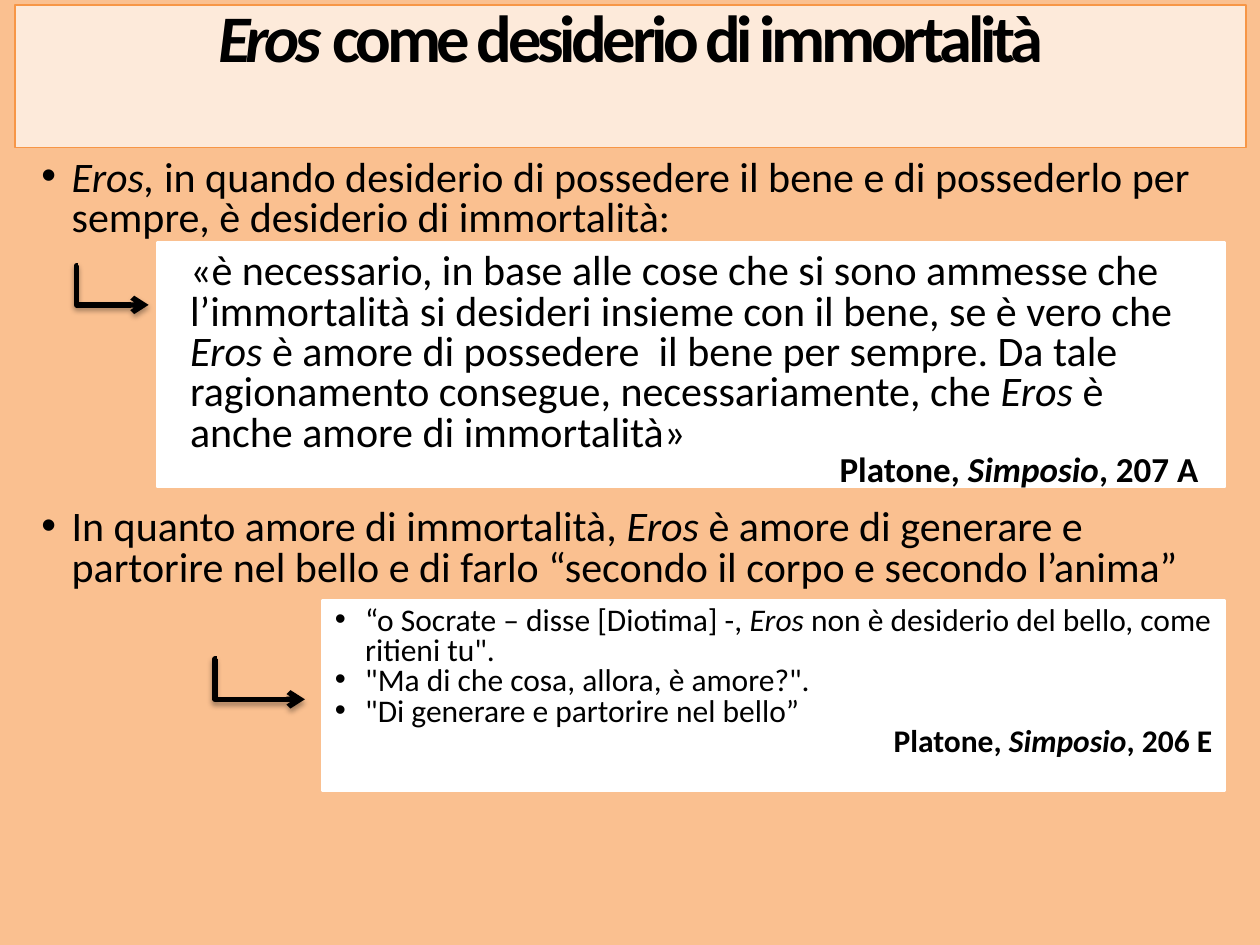
from lxml import etree
from pptx import Presentation
from pptx.dml.color import RGBColor
from pptx.enum.shapes import MSO_CONNECTOR, MSO_SHAPE
from pptx.enum.text import MSO_ANCHOR, MSO_AUTO_SIZE, PP_ALIGN
from pptx.oxml import parse_xml
from pptx.oxml.ns import nsdecls, qn
from pptx.util import Inches, Pt

ELBOW, RECTANGLE = MSO_CONNECTOR.ELBOW, MSO_SHAPE.RECTANGLE
LEFT, RIGHT, CENTER = PP_ALIGN.LEFT, PP_ALIGN.RIGHT, PP_ALIGN.CENTER
TOP, NO_FIT = MSO_ANCHOR.TOP, MSO_AUTO_SIZE.NONE
BLACK, WHITE, PEACH, CREAM, ORANGE = "000000", "FFFFFF", "FAC090", "FDEADA", "F79646"
HANG = 0.24


def paint(target, color):
    if hasattr(target, "solid"):
        target.solid()
        target.fore_color.rgb = RGBColor.from_string(color)
    else:
        target.rgb = RGBColor.from_string(color)


def write(shape, paragraphs):
    frame = shape.text_frame
    for name, value in {"word_wrap": True, "auto_size": NO_FIT, "vertical_anchor": TOP}.items():
        setattr(frame, name, value)
    for i, (runs, size, bold, align, margin, bullet, before) in enumerate(paragraphs):
        paragraph = frame.add_paragraph() if i else frame.paragraphs[0]
        spacing = {"alignment": align, "line_spacing": 0.8, "space_before": Pt(before)}
        for name, value in spacing.items():
            setattr(paragraph, name, value)
        properties = paragraph._p.get_or_add_pPr()
        properties.set("marL", str(Inches(margin)))
        properties.set("indent", str(Inches(-HANG if bullet else 0)))
        if bullet:
            etree.SubElement(properties, qn("a:buFont")).set("typeface", "Arial")
            etree.SubElement(properties, qn("a:buChar")).set("char", "•")
        for text in runs:
            run = paragraph.add_run()
            run.text = text
            style = {"name": "Calibri", "size": Pt(size), "bold": bold,
                     "italic": text in ("Eros", "Eros,", "Simposio")}
            for name, value in style.items():
                setattr(run.font, name, value)
            paint(run.font.color, BLACK)


prs = Presentation()
prs.slide_width, prs.slide_height = Inches(10), Inches(7.5)
slide = prs.slides.add_slide(prs.slide_layouts[5])
paint(slide.background.fill, PEACH)

title = slide.shapes.title
place = {"left": 0.12, "top": 0.04, "width": 9.77, "height": 1.13}
for name, value in place.items():
    setattr(title, name, Inches(value))
paint(title.fill, CREAM)
paint(title.line.fill, ORANGE)
title.line.width = Pt(0.75)
write(title, [(["Eros", " come desiderio di immortalità"], 38, True, CENTER, 0, False, 0)])
for run in title.text_frame.paragraphs[0].runs:
    run.font._element.set("spc", "-250")

panels = []
for left, top, width, height in [(1.25, 1.93, 8.47, 1.93), (2.56, 4.77, 7.16, 1.5)]:
    panel = slide.shapes.add_shape(
        RECTANGLE, Inches(left), Inches(top), Inches(width), Inches(height))
    panel.shadow.inherit = False
    paint(panel.fill, WHITE)
    paint(panel.line.fill, WHITE)
    panel.line.width = Pt(2)
    panels.append(panel)

argument = slide.shapes.add_textbox(Inches(0.23), Inches(1.22), Inches(9.38), Inches(6.26))
write(argument, [
    (["Eros,", " in quando desiderio di possedere il bene e di possederlo per sempre, "
      "è desiderio di immortalità:"], 24, False, LEFT, HANG, True, 0),
    (["«è necessario, in base alle cose che si sono ammesse che l’immortalità si desideri "
      "insieme con il bene, se è vero che ", "Eros",
      " è amore di possedere  il bene per sempre. Da tale ragionamento consegue, "
      "necessariamente, che ", "Eros", " è anche amore di immortalità»"],
     24, False, LEFT, 1.18, False, 7.5),
    (["Platone, ", "Simposio", ", 207 A"], 20, True, RIGHT, HANG, False, 0.2),
    (["In quanto amore di immortalità, ", "Eros", " è amore di generare e partorire nel bello "
      "e di farlo “secondo il corpo e secondo l’anima”"], 24, False, LEFT, HANG, True, 11.5),
])

write(panels[1], [
    (["“o Socrate – disse [Diotima] -, ", "Eros",
      " non è desiderio del bello, come ritieni tu\"."], 18, False, LEFT, HANG, True, 0),
    (["\"Ma di che cosa, allora, è amore?\"."], 18, False, LEFT, HANG, True, 0),
    (["\"Di generare e partorire nel bello”"], 18, False, LEFT, HANG, True, 0),
    (["Platone, ", "Simposio", ", 206 E"], 18, True, RIGHT, HANG, False, 0),
])

for left, top, right, bottom in [(0.62, 2.11, 1.18, 2.42), (1.72, 5.23, 2.42, 5.55)]:
    arrow = slide.shapes.add_connector(
        ELBOW, Inches(left), Inches(top), Inches(right), Inches(bottom))
    paint(arrow.line.fill, BLACK)
    arrow.line.width = Pt(3)
    etree.SubElement(arrow.line._get_or_add_ln(), qn("a:tailEnd")).set("type", "arrow")
    properties = arrow._element.spPr
    bend = etree.SubElement(properties.find(qn("a:prstGeom")).find(qn("a:avLst")), qn("a:gd"))
    bend.set("name", "adj1")
    bend.set("fmla", "val -2000")
    properties.append(parse_xml(
        f'<a:effectLst {nsdecls("a")}><a:outerShdw blurRad="{Pt(3.1)}" dist="{Pt(1.8)}" '
        'dir="5400000" rotWithShape="0"><a:srgbClr val="000000"><a:alpha val="35000"/>'
        '</a:srgbClr></a:outerShdw></a:effectLst>'))

prs.save("out.pptx")
